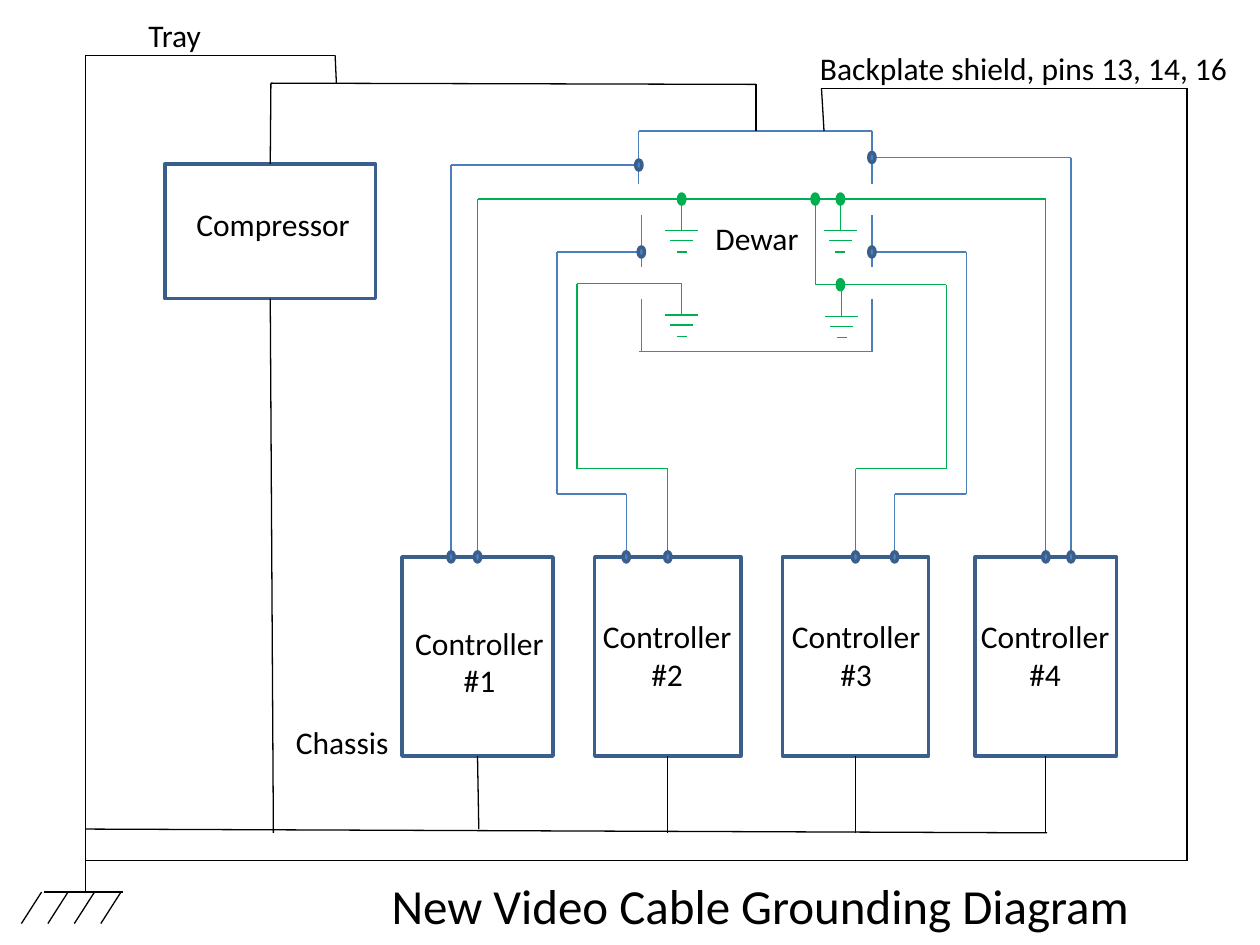
from itertools import pairwise

from lxml import etree
from pptx import Presentation
from pptx.dml.color import RGBColor
from pptx.enum.shapes import MSO_CONNECTOR, MSO_SHAPE
from pptx.enum.text import MSO_AUTO_SIZE, PP_ALIGN
from pptx.oxml.ns import qn
from pptx.util import Emu, Pt

LINE = MSO_CONNECTOR.STRAIGHT
RECT, OVAL = MSO_SHAPE.RECTANGLE, MSO_SHAPE.OVAL
FIT = MSO_AUTO_SIZE.SHAPE_TO_FIT_TEXT
LEFT, CENTER = PP_ALIGN.LEFT, PP_ALIGN.CENTER
TOP, BOTTOM = 0, 2  # connection sites of a rectangle
BLACK, GREEN, BLUE = "000000", "00B050", "4B7EBC"
FILL, EDGE = "4F81BD", "3A5F8C"
SCALE = 9144  # 100 px to the inch


def px(n):
    return Emu(round(n * SCALE))


def rgb(color):
    return RGBColor.from_string(color)


def text(s, x, y, w, h, lines, size=18, align=LEFT):
    tf = s.shapes.add_textbox(px(x), px(y), px(w), px(h)).text_frame
    tf.word_wrap = False
    tf.auto_size = FIT
    for i, line in enumerate(lines):
        p = tf.paragraphs[0] if i == 0 else tf.add_paragraph()
        p.alignment = align
        r = p.add_run()
        r.text = line
        r.font.name, r.font.size = "Calibri", Pt(size)
        r.font.color.rgb = rgb(BLACK)


def shape(s, kind, x, y, w, h, fill=None, edge=EDGE):
    sp = s.shapes.add_shape(kind, px(x), px(y), px(w), px(h))
    sp.shadow.inherit = False
    if fill:
        sp.fill.solid()
        sp.fill.fore_color.rgb = rgb(fill)
    else:
        sp.fill.background()
    sp.line.color.rgb = rgb(edge)
    sp.line.width = Pt(2)
    return sp


def dot(s, x, y, fill=FILL, edge=EDGE):
    shape(s, OVAL, x - 2.5, y - 4, 5, 8, fill, edge)


def wire(s, x, y, points, color, start=None, end=None):
    """Run straight lines through points given from (x, y); start and end are (shape, site)."""
    runs = []
    for (ax, ay), (bx, by) in pairwise(points):
        c = s.shapes.add_connector(LINE, px(x + ax), px(y + ay), px(x + bx), px(y + by))
        c.line.color.rgb = rgb(color)
        c.line.width = Pt(0.75)
        etree.SubElement(c._element.spPr, qn("a:effectLst"))
        runs.append(c)
    if start:
        runs[0].begin_connect(*start)
    if end:
        runs[-1].end_connect(*end)


def signal_ground(s, x, y):
    wire(s, x, y, [(0, 0), (0, 25)], GREEN)
    for half, drop in ((13, 25), (9, 33), (4, 42)):
        wire(s, x, y, [(-half, drop), (half, drop)], GREEN)


def chassis_ground(s, x, y, w, h):
    wire(s, x, y, [(18, 0), (w, 0)], BLACK)
    for i in range(4):
        wire(s, x + 21 * i, y, [(16, 0), (0, h)], BLACK)


def dewar(s, x, y, w, h):
    text(s, x + 51, y + 65, 87, 40, ["Dewar"])
    for level in (0, h):
        wire(s, x, y, [(0, level), (w, level)], BLUE)
    # Side walls, open where the cables pass
    for top, bottom, left in ((0, 42, 0), (67, 108, 2), (133, h, 2)):
        for side in (left, w):
            wire(s, x, y, [(side, top), (side, bottom)], BLUE)


def controller(s, x, y, w, h, number, label_x, label_y):
    box = shape(s, RECT, x, y, w, h)
    text(s, x + label_x, y + label_y, 123, 71, ["Controller", f"#{number}"], align=CENTER)
    return box


def compressor(s, x, y, w, h):
    box = shape(s, RECT, x, y, w, h)
    text(s, x + 15, y + 28, 143, 40, ["Compressor"])
    return box


def video_cables(s, x, y, boxes):
    """Signal grounds in green and shields in blue, from the dewar at (x, y)."""
    # Each green route ends at a controller's top centre (dx, 338)
    grounds = [
        [(34, 54), (-128, 54), (-128, 338)],
        [(34, 121), (-49, 121), (-49, 268), (23, 268), (23, 338)],
        [(161, 122), (244, 122), (244, 268), (172, 268), (172, 338)],
        [(160, 54), (323, 54), (323, 338)],
    ]
    shields = [
        [(0, 27), (-149, 27), (-149, 338)],
        [(2, 96), (-65, 96), (-65, 288), (-10, 288), (-10, 338)],
        [(185, 96), (260, 96), (260, 288), (203, 288), (203, 338)],
        [(185, 21), (343, 21), (343, 338)],
    ]
    for route, box in zip(grounds, boxes):
        wire(s, x, y, route, GREEN, end=(box, TOP))
        signal_ground(s, x + route[0][0], y + route[0][1])
    # Links between the signal grounds
    wire(s, x, y, [(34, 54), (160, 54)], GREEN)
    wire(s, x, y, [(140, 54), (140, 122), (161, 122)], GREEN)
    for route in shields:
        wire(s, x, y, route, BLUE)
    # Joints
    for dx, dy in ((34, 54), (140, 54), (160, 54), (160, 122)):
        dot(s, x + dx, y + dy, GREEN, GREEN)
    for route in grounds:
        dot(s, x + route[-1][0], y + route[-1][1])
    for route in shields:
        for dx, dy in (route[0], route[-1]):
            dot(s, x + dx, y + dy)


def chassis_wiring(s, x, y, w, h, comp, boxes):
    # Tray, and the dewar's line to the compressor
    text(s, x + 40, y - 36, 62, 40, ["Tray"])
    wire(s, x, y, [(0, 614), (0, 0), (198, 0), (199, 22)], BLACK)
    wire(s, x, y, [(532, 60), (532, 23), (147, 22), (147, 86)], BLACK, end=(comp, TOP))
    # Bus and drops
    text(s, x + 157, y + 525, 94, 40, ["Chassis"])
    wire(s, x, y, [(0, 614), (763, 617)], BLACK)
    for box, dx, dy in zip([comp, *boxes], (149, 312, 462, 611, 762), (617, 614, 617, 617, 617)):
        wire(s, x, y, [(dx, 556), (dx, dy)], BLACK, start=(box, BOTTOM))
    # Backplate shield
    text(s, x + 573, y - 10, 347, 40, ["Backplate shield, pins 13, 14, 16"])
    wire(s, x, y, [(586, 60), (584, 26), (w, 26), (w, h), (0, h)], BLACK)
    # Earth point
    wire(s, x, y, [(0, 614), (0, 664)], BLACK)
    chassis_ground(s, x - 51, y + 664, 81, 25)


def main():
    prs = Presentation()
    prs.slide_width, prs.slide_height = px(1000), px(750)
    s = prs.slides.add_slide(prs.slide_layouts[6])

    dewar(s, 507, 104, 185, 175)
    comp = compressor(s, 131, 130, 167, 107)
    # Left, width and label offsets of each controller
    layout = [(319, 120, 0, 48), (472, 116, -4, 43), (621, 116, -3, 43), (774, 112, -6, 43)]
    boxes = [
        controller(s, x, 442, w, 158, n, dx, dy)
        for n, (x, w, dx, dy) in enumerate(layout, 1)
    ]
    chassis_wiring(s, 68, 44, 874, 639, comp, boxes)
    video_cables(s, 507, 104, boxes)
    text(s, 301, 690, 611, 57, ["New Video Cable Grounding Diagram"], size=28)

    prs.save("out.pptx")


if __name__ == "__main__":
    main()
